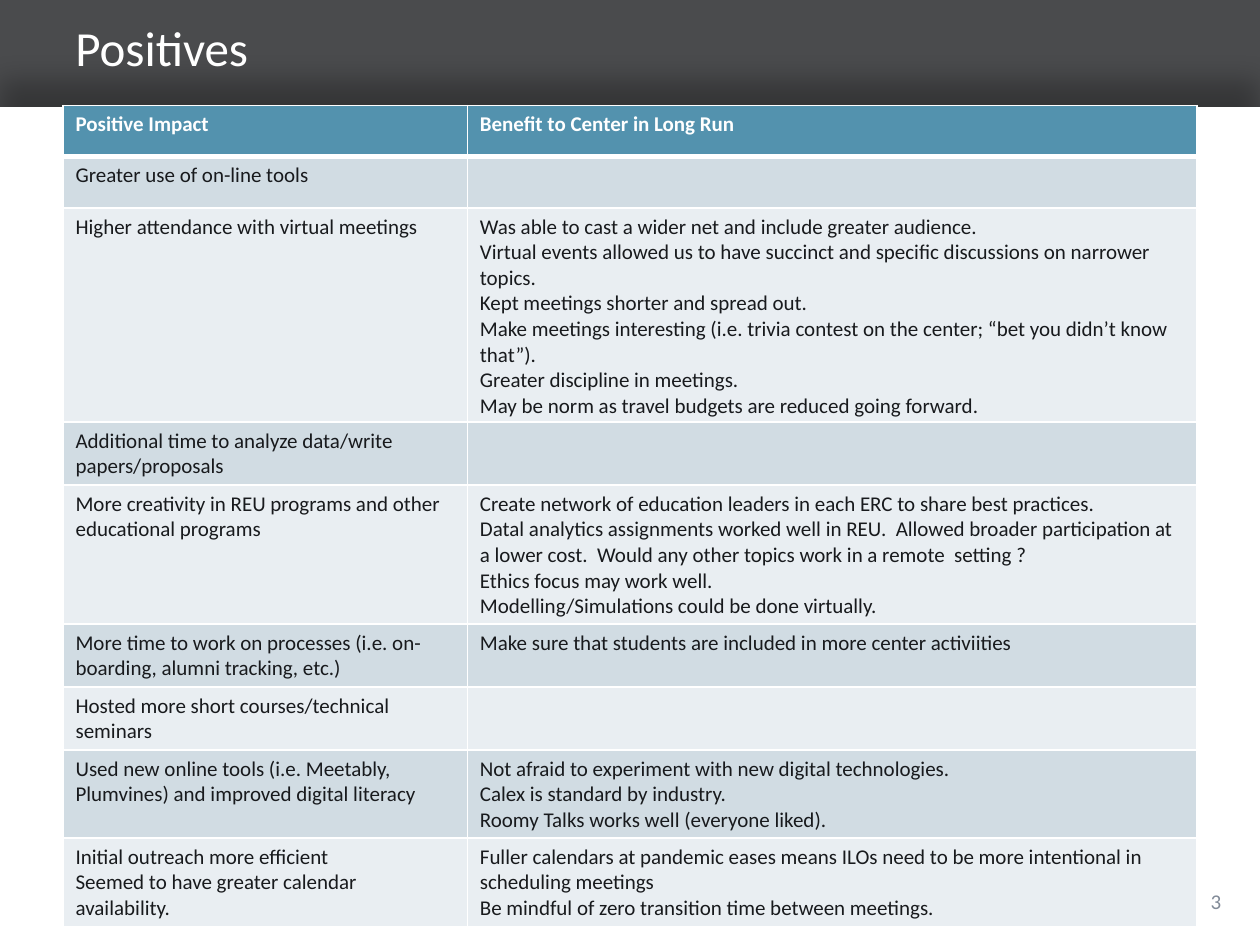
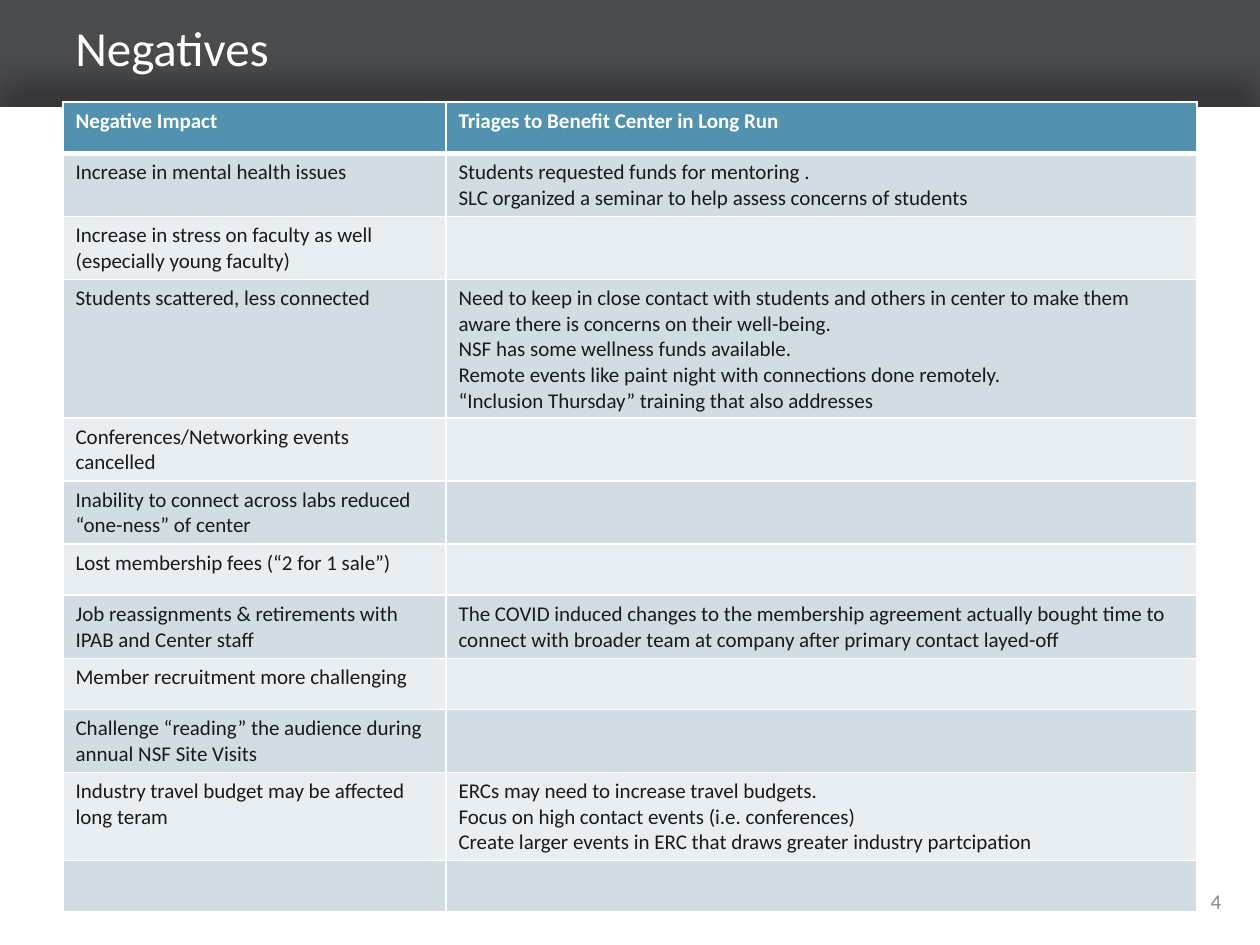
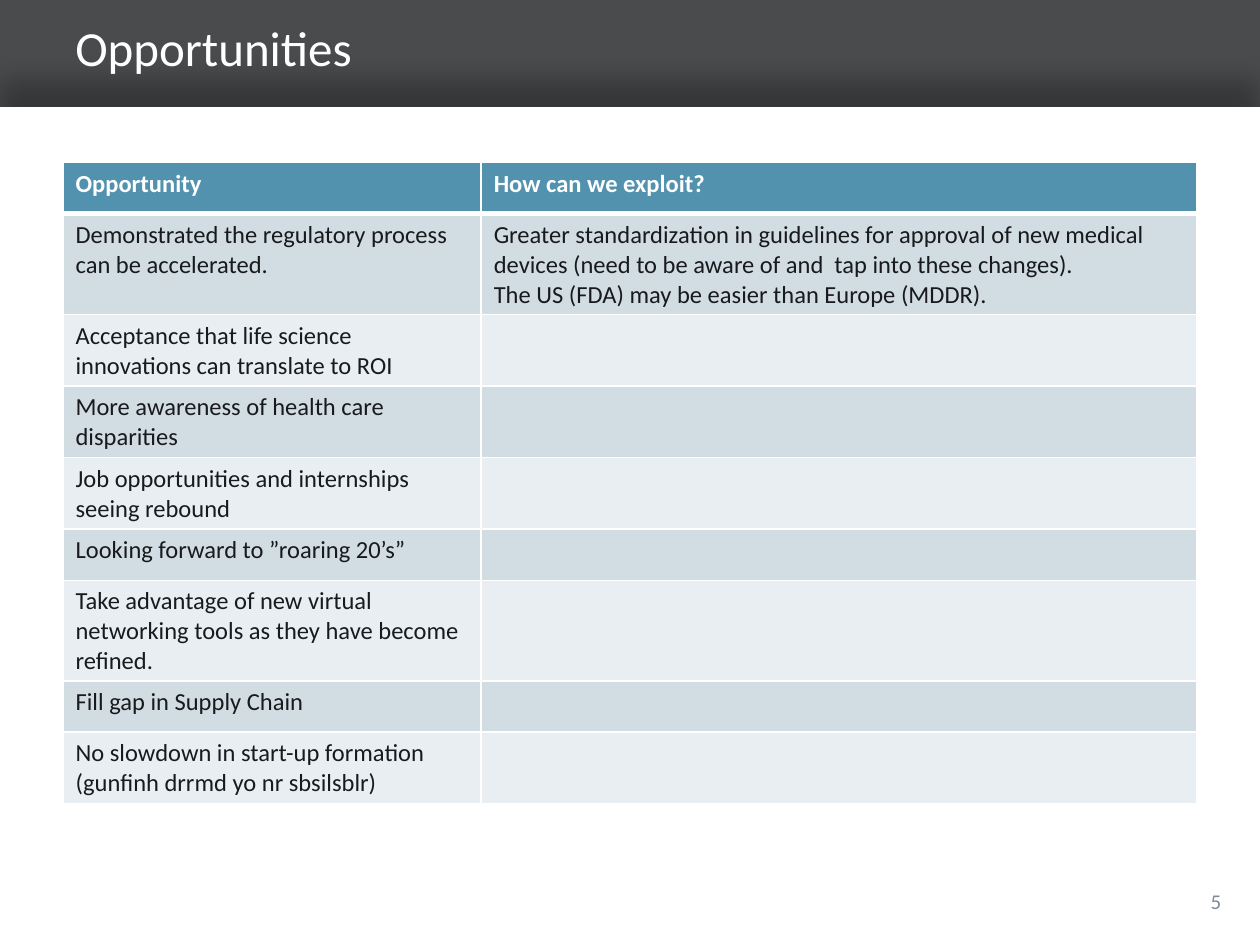
from dataclasses import dataclass

from lxml.etree import SubElement
from pptx import Presentation
from pptx.dml.color import RGBColor
from pptx.enum.shapes import MSO_SHAPE
from pptx.enum.text import MSO_ANCHOR, PP_ALIGN
from pptx.oxml.ns import qn
from pptx.util import Cm, Pt


@dataclass(frozen=True)
class Theme:
    font: str = "Calibri"
    band: str = "4A4B4D"
    white: str = "FFFFFF"
    ink: str = "181A1D"
    header: str = "5392AE"
    stripes: tuple = ("E9EEF2", "D1DCE3")
    number: str = "828B98"
    title_size: int = 28
    number_size: int = 12
    line: int = 1
    header_line: int = 3


THEME = Theme()
SLIDE_W, SLIDE_H = 25.4, 19.05
BAND_H = 2.16
MARGIN = 1.27
CONTENT_W = SLIDE_W - 2 * MARGIN
ROW_H = 1.03

POSITIVES = [
    ("Positive Impact", "Benefit to Center in Long Run"),
    ("Greater use of on-line tools", ""),
    ("Higher attendance with virtual meetings",
     "Was able to cast a wider net and include greater audience.\n"
     "Virtual events allowed us to have succinct and specific discussions on narrower topics.\n"
     "Kept meetings shorter and spread out.\n"
     "Make meetings interesting (i.e. trivia contest on the center; “bet you didn’t know that”).\n"
     "Greater discipline in meetings.\n"
     "May be norm as travel budgets are reduced going forward."),
    ("Additional time to analyze data/write papers/proposals", ""),
    ("More creativity in REU programs and other educational programs",
     "Create network of education leaders in each ERC to share best practices.\n"
     "Datal analytics assignments worked well in REU.  Allowed broader participation at "
     "a lower cost.  Would any other topics work in a remote  setting ?\n"
     "Ethics focus may work well.\n"
     "Modelling/Simulations could be done virtually."),
    ("More time to work on processes (i.e. on-boarding, alumni tracking, etc.)",
     "Make sure that students are included in more center activiities"),
    ("Hosted more short courses/technical seminars", ""),
    ("Used new online tools (i.e. Meetably, Plumvines) and improved digital literacy",
     "Not afraid to experiment with new digital technologies.\n"
     "Calex is standard by industry.\n"
     "Roomy Talks works well (everyone liked)."),
    ("Initial outreach more efficient\nSeemed to have greater calendar availability.",
     "Fuller calendars at pandemic eases means ILOs need to be more intentional in "
     "scheduling meetings\n"
     "Be mindful of zero transition time between meetings."),
]

NEGATIVES = [
    ("Negative Impact", "Triages to Benefit Center in Long Run"),
    ("Increase in mental health issues",
     "Students requested funds for mentoring .\n"
     "SLC organized a seminar to help assess concerns of students"),
    ("Increase in stress on faculty as well (especially young faculty)", ""),
    ("Students scattered, less connected",
     "Need to keep in close contact with students and others in center to make them "
     "aware there is concerns on their well-being.\n"
     "NSF has some wellness funds available.\n"
     "Remote events like paint night with connections done remotely.\n"
     "“Inclusion Thursday” training that also addresses"),
    ("Conferences/Networking events cancelled", ""),
    ("Inability to connect across labs reduced “one-ness” of center", ""),
    ("Lost membership fees (“2 for 1 sale”)", ""),
    ("Job reassignments & retirements with IPAB and Center staff",
     "The COVID induced changes to the membership agreement actually bought time to "
     "connect with broader team at company after primary contact layed-off"),
    ("Member recruitment more challenging", ""),
    ("Challenge “reading” the audience during annual NSF Site Visits", ""),
    ("Industry travel budget may be affected long teram",
     "ERCs may need to increase travel budgets.\n"
     "Focus on high contact events (i.e. conferences)\n"
     "Create larger events in ERC that draws greater industry partcipation"),
    ("", ""),
]

OPPORTUNITIES = [
    ("Opportunity", "How can we exploit?"),
    ("Demonstrated the regulatory process can be accelerated.",
     "Greater standardization in guidelines for approval of new medical devices "
     "(need to be aware of and  tap into these changes).\n"
     "The US (FDA) may be easier than Europe (MDDR)."),
    ("Acceptance that life science innovations can translate to ROI", ""),
    ("More awareness of health care disparities", ""),
    ("Job opportunities and internships seeing rebound", ""),
    ("Looking forward to ”roaring 20’s”", ""),
    ("Take advantage of new virtual networking tools as they have become refined.", ""),
    ("Fill gap in Supply Chain", ""),
    ("No slowdown in start-up formation (gunfinh drrmd yo nr sbsilsblr)", ""),
]


def rgb(color):
    return RGBColor.from_string(color)


def style_text(tf, size, color, bold=False, align=PP_ALIGN.LEFT):
    for p in tf.paragraphs:
        p.alignment = align
        p.font.name = THEME.font
        p.font.size = Pt(size)
        p.font.bold = bold
        p.font.color.rgb = rgb(color)


def add_text(s, box, text, size, color, align=PP_ALIGN.LEFT):
    tf = s.shapes.add_textbox(*map(Cm, box)).text_frame
    tf.word_wrap = True
    tf.vertical_anchor = MSO_ANCHOR.MIDDLE
    tf.text = text
    style_text(tf, size, color, align=align)


def add_rect(s, top, height, color):
    sp = s.shapes.add_shape(MSO_SHAPE.RECTANGLE, 0, Cm(top), Cm(SLIDE_W), Cm(height))
    sp.shadow.inherit = False
    sp.fill.solid()
    sp.fill.fore_color.rgb = rgb(color)
    sp.line.fill.background()
    return sp


def cast_shadow_up(sp):
    effects = sp._element.spPr.find(qn("a:effectLst"))
    shadow = SubElement(effects, qn("a:outerShdw"), blurRad=str(Pt(15.2)),
                        dist=str(Pt(15)), dir="16200000", rotWithShape="0")
    color = SubElement(shadow, qn("a:srgbClr"), val="000000")
    SubElement(color, qn("a:alpha"), val="27000")


def set_borders(cell, **widths):
    """Draw white borders; widths in points are keyed L, R, T and B."""
    tcPr = cell._tc.get_or_add_tcPr()
    for side in "LRTB":
        width = widths.get(side, THEME.line)
        ln = SubElement(tcPr, qn(f"a:ln{side}"), w=str(Pt(width)))
        fill = SubElement(ln, qn("a:solidFill"))
        SubElement(fill, qn("a:srgbClr"), val=THEME.white)


def fill_cell(cell, row, text, size):
    is_header = row == 0
    if is_header:
        set_borders(cell, B=THEME.header_line)
    elif row == 1:
        set_borders(cell, T=THEME.header_line)
    else:
        set_borders(cell)
    cell.fill.solid()
    cell.fill.fore_color.rgb = rgb(THEME.header if is_header else THEME.stripes[row % 2])
    cell.text_frame.text = text
    style_text(cell.text_frame, size, THEME.white if is_header else THEME.ink, bold=is_header)


def add_impact_table(s, rows, top, first_col, size):
    table = s.shapes.add_table(len(rows), 2, Cm(MARGIN), Cm(top), Cm(CONTENT_W),
                               Cm(ROW_H * len(rows))).table
    table.columns[0].width = Cm(first_col)
    table.columns[1].width = Cm(CONTENT_W - first_col)
    for i, texts in enumerate(rows):
        table.rows[i].height = Cm(ROW_H)
        for j, text in enumerate(texts):
            fill_cell(table.cell(i, j), i, text, size)


def add_base_slide(prs, title):
    s = prs.slides.add_slide(prs.slide_layouts[6])
    add_rect(s, 0, BAND_H, THEME.band)
    cast_shadow_up(add_rect(s, BAND_H, SLIDE_H - BAND_H, THEME.white))
    add_text(s, (MARGIN, 0.25, CONTENT_W, 1.4), title, THEME.title_size, THEME.white)
    return s


def add_page_number(s, number):
    add_text(s, (23.7, 17.65, 1.17, 1.02), str(number), THEME.number_size,
             THEME.number, PP_ALIGN.RIGHT)


def main():
    prs = Presentation()
    prs.slide_width, prs.slide_height = Cm(SLIDE_W), Cm(SLIDE_H)
    slides = [
        ("Positives", POSITIVES, 2.13, 8.15, 12),
        ("Negatives", NEGATIVES, 2.06, 7.72, 12),
        ("Opportunities", OPPORTUNITIES, 3.28, 8.43, 14),
    ]
    for number, (title, rows, top, first_col, size) in enumerate(slides, start=3):
        s = add_base_slide(prs, title)
        add_impact_table(s, rows, top, first_col, size)
        add_page_number(s, number)
    prs.save("out.pptx")


if __name__ == "__main__":
    main()
